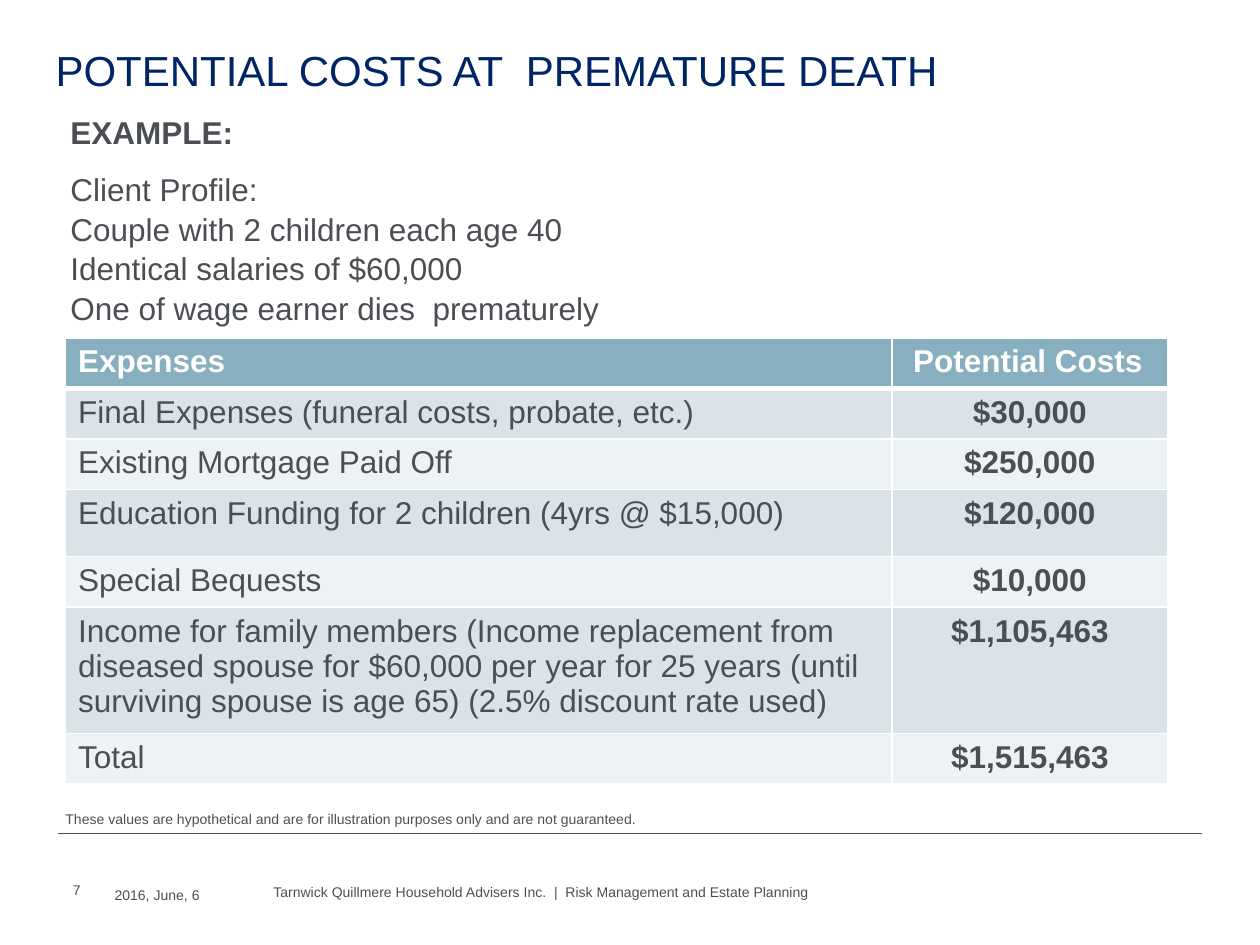
from lxml import etree
from pptx import Presentation
from pptx import util as u
from pptx.dml import color
from pptx.enum import shapes, text
from pptx.oxml import ns

NAVY, GREY, WHITE = "002567", "4B4F54", "FFFFFF"
HEADER_FILL, BAND_FILLS = "87AFBF", ("D9E3E8", "EDF2F4")

EXPENSES = [
    ("Expenses", " Potential Costs"),
    ("Final Expenses (funeral costs, probate, etc.)", "$30,000"),
    ("Existing Mortgage Paid Off", "$250,000"),
    ("Education Funding for 2 children (4yrs @ $15,000)", "$120,000"),
    ("Special Bequests", "$10,000"),
    ("Income for family members (Income replacement from diseased spouse "
     "for $60,000 per year for 25 years (until surviving spouse is age 65) "
     "(2.5% discount rate used)", "$1,105,463"),
    ("Total", "$1,515,463"),
]
COLUMN_WIDTHS = (16.66, 5.56)
ROW_HEIGHTS = (1.02, 1.02, 1.02, 1.35, 1.02, 2.55, 1.02)
PROFILE = ("Client Profile:\vCouple with 2 children each age 40\v"
           "Identical salaries of $60,000\vOne of wage earner dies  prematurely")


def rgb(value):
    return color.RGBColor.from_string(value)


class Deck:
    font = "Arial"

    def __init__(self):
        self.prs = Presentation()
        self.prs.slide_width, self.prs.slide_height = u.Cm(25.4), u.Cm(19.05)
        self.s = self.prs.slides.add_slide(self.prs.slide_layouts[5])

    def style(self, p, size, ink, bold=False, align=text.PP_ALIGN.LEFT):
        p.alignment = align
        p.font.name, p.font.size, p.font.bold = self.font, u.Pt(size), bold
        p.font.color.rgb = rgb(ink)

    def no_insets(self, tf):
        tf.margin_left = tf.margin_right = tf.margin_top = tf.margin_bottom = 0

    def title(self, words, left, top, width, height):
        sp = self.s.shapes.title
        sp.left, sp.top, sp.width, sp.height = map(u.Cm, (left, top, width, height))
        tf = sp.text_frame
        tf.text = words
        tf.auto_size = text.MSO_AUTO_SIZE.NONE
        tf.vertical_anchor = text.MSO_ANCHOR.TOP
        self.no_insets(tf)
        p = tf.paragraphs[0]
        p.line_spacing = 1.1
        self.style(p, 24, NAVY)

    def textbox(self, words, left, top, width, height, size=8,
                anchor=text.MSO_ANCHOR.TOP, insets=True):
        sp = self.s.shapes.add_textbox(*map(u.Cm, (left, top, width, height)))
        tf = sp.text_frame
        tf.word_wrap = True
        tf.vertical_anchor = anchor
        if not insets:
            self.no_insets(tf)
        p = tf.paragraphs[0]
        p.text = words
        self.style(p, size, GREY)
        return tf

    def profile(self, heading, details, *box):
        tf = self.textbox(heading, *box, size=18)
        tf.paragraphs[0].font.bold = True
        p = tf.add_paragraph()
        p.text = details
        p.space_before = u.Pt(10)
        self.style(p, 18, GREY)
        for p in tf.paragraphs:
            p.line_spacing = 1.05

    def rule(self, left, right, y):
        sp = self.s.shapes.add_connector(
            shapes.MSO_CONNECTOR.STRAIGHT, *map(u.Cm, (left, y, right, y)))
        sp.line.color.rgb = rgb(GREY)
        sp.line.width = u.Pt(0.5)
        etree.SubElement(sp._element.spPr, ns.qn("a:effectLst"))

    def borders(self, cell, top, bottom):
        tc_pr = cell._tc.get_or_add_tcPr()
        for side, width in (("L", 1), ("R", 1), ("T", top), ("B", bottom)):
            ln = etree.SubElement(tc_pr, ns.qn("a:ln" + side), w=str(u.Pt(width)))
            fill = etree.SubElement(ln, ns.qn("a:solidFill"))
            etree.SubElement(fill, ns.qn("a:srgbClr"), val=WHITE)

    def table(self, rows, widths, heights, left, top):
        sp = self.s.shapes.add_table(
            len(rows), len(widths),
            *map(u.Cm, (left, top, sum(widths), sum(heights))))
        table = sp.table
        for column, width in zip(table.columns, widths):
            column.width = u.Cm(width)
        for i, (row, height) in enumerate(zip(rows, heights)):
            table.rows[i].height = u.Cm(height)
            header = i == 0
            for j, words in enumerate(row):
                cell = table.cell(i, j)
                self.borders(cell, 3 if i == 1 else 1, 3 if header else 1)
                cell.fill.solid()
                cell.fill.fore_color.rgb = rgb(
                    HEADER_FILL if header else BAND_FILLS[(i - 1) % 2])
                p = cell.text_frame.paragraphs[0]
                p.text = words
                cost = j == 1 and not header
                self.style(p, 18, WHITE if header else GREY, header or cost,
                           text.PP_ALIGN.CENTER if cost else text.PP_ALIGN.LEFT)


def main():
    deck = Deck()
    deck.rule(1.17, 24.23, 16.81)
    deck.textbox("2016, June, 6", 2.31, 17.65, 3, 0.56,
                 anchor=text.MSO_ANCHOR.BOTTOM, insets=False)
    deck.textbox("7", 1.22, 17.65, 0.91, 0.56)
    deck.textbox("Tarnwick Quillmere Household Advisers Inc.  |  "
                 "Risk Management and Estate Planning", 5.51, 17.7, 14, 0.58,
                 anchor=text.MSO_ANCHOR.MIDDLE, insets=False)
    deck.title("POTENTIAL COSTS AT  PREMATURE DEATH", 1.12, 0.79, 23.09, 1.02)
    deck.profile("EXAMPLE:", PROFILE, 1.17, 2.11, 23.06, 1.04)
    deck.textbox("These values are hypothetical and are for illustration "
                 "purposes only and are not guaranteed.", 1.07, 16.21, 22.23, 0.61)
    deck.table(EXPENSES, COLUMN_WIDTHS, ROW_HEIGHTS, 1.32, 6.81)
    deck.prs.save("out.pptx")


if __name__ == "__main__":
    main()
